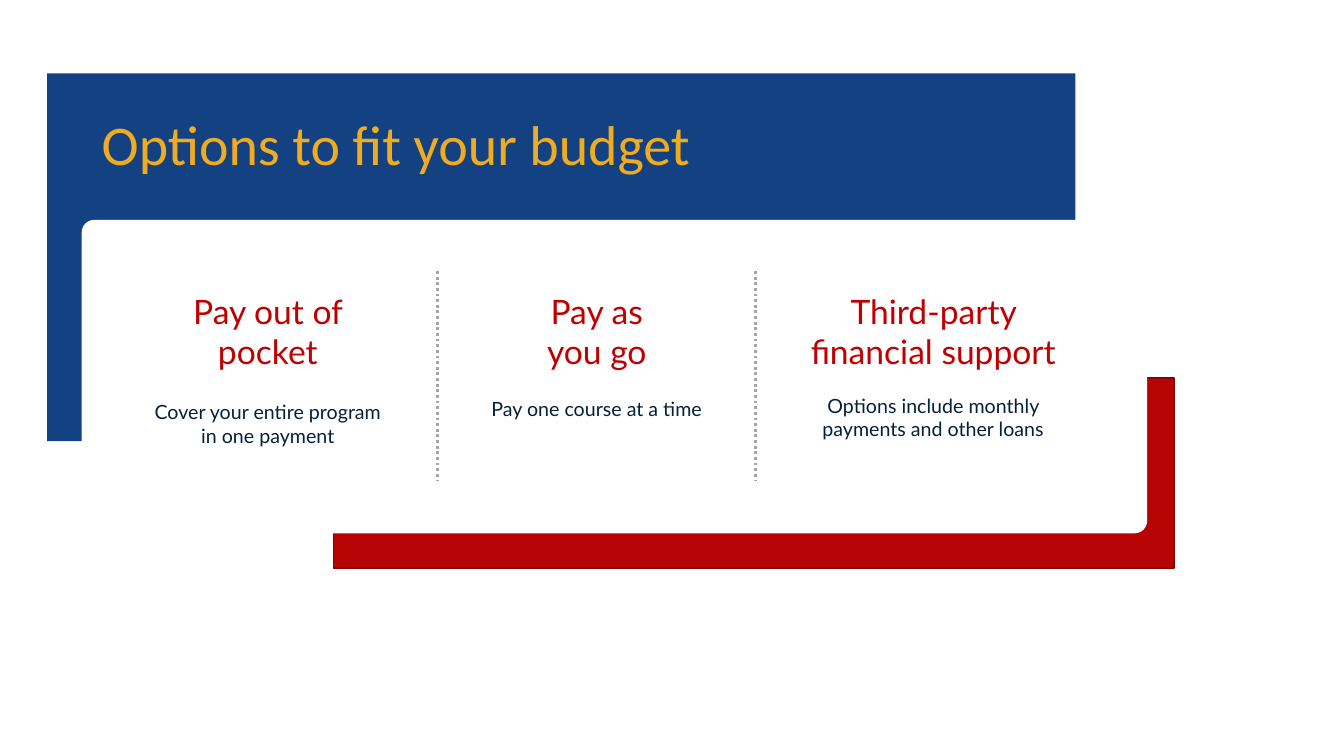
from pptx import Presentation
from pptx.dml.color import RGBColor
from pptx.enum.dml import MSO_LINE
from pptx.enum.shapes import MSO_CONNECTOR, MSO_SHAPE
from pptx.enum.text import MSO_ANCHOR, MSO_AUTO_SIZE, PP_ALIGN
from pptx.oxml import parse_xml
from pptx.oxml.ns import nsdecls
from pptx.util import Cm, Pt

BLUE = RGBColor(0x14, 0x41, 0x82)
RED = RGBColor(0xB6, 0x04, 0x04)
DARK_RED = RGBColor(0x87, 0x03, 0x03)
HEADING_RED = RGBColor(0xC0, 0x00, 0x00)
WHITE = RGBColor(0xFF, 0xFF, 0xFF)
GOLD = RGBColor(0xEF, 0xAC, 0x21)
NAVY = RGBColor(0x05, 0x20, 0x3B)
GRAY = RGBColor(0xA5, 0xA5, 0xA5)

PANEL = (2.06, 5.54, 26.85, 7.9)
OPTIONS = [
    ("Pay out of pocket", "Cover your entire program in one payment", 4.69, 6.81, 6.32),
    ("Pay as you go", "Pay one course at a time", 12.98, 4.37, 6.32),
    ("Third-party financial support", "Options include monthly payments and other loans",
     21.46, 7.77, 7.14),
]
DIVIDERS = (8.96, 16.99)


def add_block(slide, box, fill, kind=MSO_SHAPE.RECTANGLE, outline=None):
    """Add a filled shape in the box, outlined if a colour is given."""
    block = slide.shapes.add_shape(kind, *map(Cm, box))
    block.shadow.inherit = False
    block.fill.solid()
    block.fill.fore_color.rgb = fill
    if outline is None:
        block.line.fill.background()
    else:
        block.line.color.rgb = outline
        block.line.width = Pt(1)
    return block


def write(paragraph, wording, font, size, color):
    """Add one formatted run to the paragraph."""
    run = paragraph.add_run()
    run.text = wording
    run.font.name = font
    run.font.size = Pt(size)
    run.font.color.rgb = color


def add_caption(slide, box, wording, size, color):
    """Add centred wrapping text in the box."""
    caption = slide.shapes.add_textbox(*map(Cm, box)).text_frame
    caption.word_wrap = True
    paragraph = caption.paragraphs[0]
    paragraph.alignment = PP_ALIGN.CENTER
    write(paragraph, wording, "Lato", size, color)


def add_divider(slide, x, top, height):
    """Add a dotted vertical line."""
    divider = slide.shapes.add_connector(
        MSO_CONNECTOR.STRAIGHT, Cm(x), Cm(top), Cm(x), Cm(top + height))
    divider.line.color.rgb = GRAY
    divider.line.width = Pt(2)
    divider.line.dash_style = MSO_LINE.ROUND_DOT
    divider._element.spPr.append(parse_xml(f"<a:effectLst {nsdecls('a')}/>"))


def add_frame(slide, panel):
    """Add the white panel over its blue and red corner blocks."""
    left, top, width, height = panel
    add_block(slide, (left - 0.87, top - 3.69, 25.91, 9.27), BLUE)
    add_block(slide, (left + 6.35, top + 3.99, 21.18, 4.78), RED, outline=DARK_RED)
    card = add_block(slide, panel, WHITE, MSO_SHAPE.ROUNDED_RECTANGLE)
    card.adjustments[0] = 0.04


def add_title(slide, box):
    """Place the title in the box, in front of the frame."""
    title = slide.shapes.title
    title.left, title.top, title.width, title.height = map(Cm, box)
    frame = title.text_frame
    frame.word_wrap = True
    frame.auto_size = MSO_AUTO_SIZE.NONE
    frame.vertical_anchor = MSO_ANCHOR.TOP
    paragraph = frame.paragraphs[0]
    paragraph.alignment = PP_ALIGN.LEFT
    paragraph.line_spacing = 0.9
    write(paragraph, "Options to fit your budget", "Calibri", 40, GOLD)
    slide.shapes._spTree.append(title._element)


def add_options(slide, panel):
    """Fill the panel with the payment options and their dividers."""
    left, top = panel[:2]
    for index, (heading, detail, center, heading_width, detail_width) in enumerate(OPTIONS):
        middle = left + center
        add_caption(slide, (middle - heading_width / 2, top + 1.67, heading_width, 1.55),
                    heading, 24, HEADING_RED)
        add_caption(slide, (middle - detail_width / 2, top + 4.42 - 0.08 * index,
                            detail_width, 1.45), detail, 14, NAVY)
    for offset in DIVIDERS:
        add_divider(slide, left + offset, top + 1.29, 5.26)


def main():
    """Build and save the slide."""
    deck = Presentation()
    deck.slide_width, deck.slide_height = Cm(33.87), Cm(19.05)
    slide = deck.slides.add_slide(deck.slide_layouts[5])
    add_frame(slide, PANEL)
    add_title(slide, (2.31, 2.82, 24.66, 2.34))
    add_options(slide, PANEL)
    deck.save("out.pptx")


if __name__ == "__main__":
    main()
